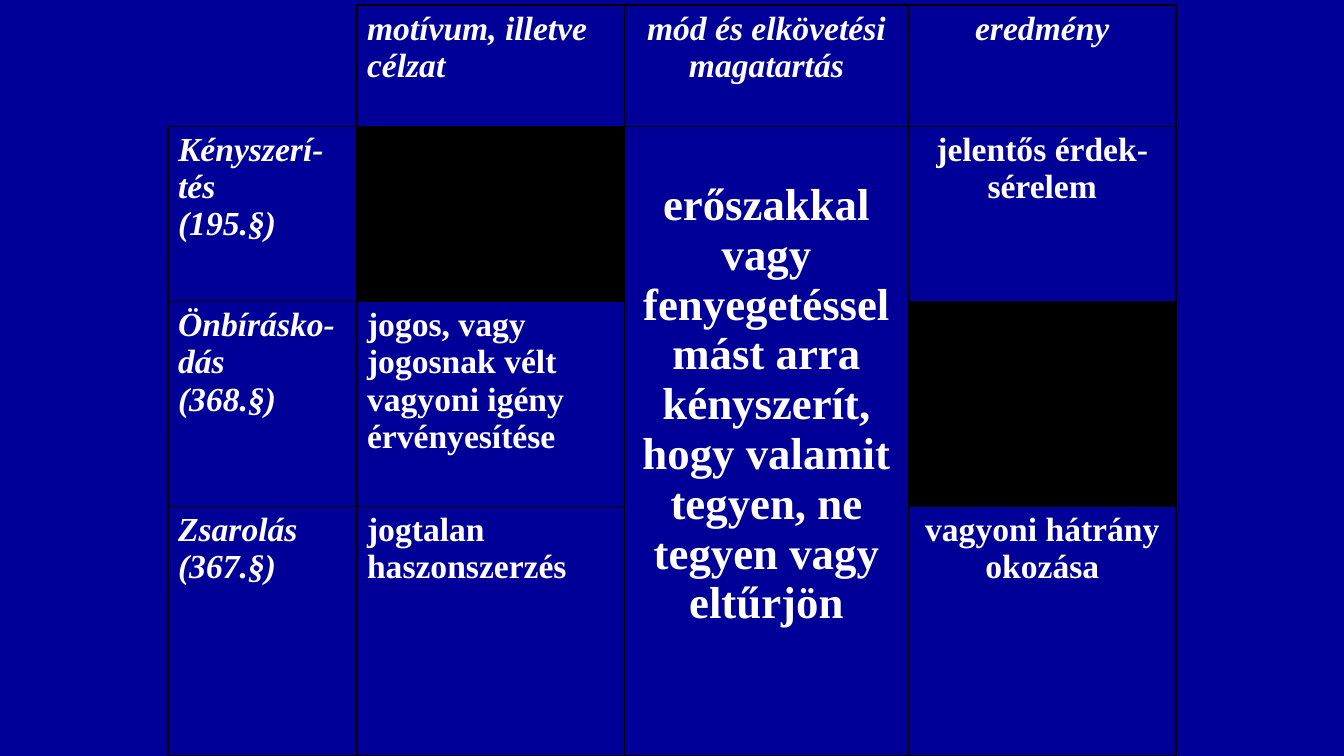
from lxml.etree import SubElement
from pptx import Presentation
from pptx.dml.color import RGBColor
from pptx.enum.text import PP_ALIGN
from pptx.oxml.ns import qn
from pptx.util import Pt

NAVY = RGBColor(0x00, 0x00, 0x99)
BLACK = RGBColor(0x00, 0x00, 0x00)
WHITE = RGBColor(0xFF, 0xFF, 0xFF)
FONT = "Times New Roman"

CONDUCT = ("erőszakkal vagy fenyegetéssel mást arra kényszerít,\n"
           "hogy valamit tegyen, ne tegyen vagy eltűrjön")
ROWS = [
    ["", "motívum, illetve célzat", "mód és elkövetési magatartás", "eredmény"],
    ["Kényszerí-tés\n(195.§)", "", CONDUCT, "jelentős érdek-sérelem"],
    ["Önbírásko-dás\n(368.§)", "jogos, vagy jogosnak vélt vagyoni igény érvényesítése", "", ""],
    ["Zsarolás\n(367.§)", "jogtalan haszonszerzés", "", "vagyoni hátrány okozása"],
]
BLACKED_OUT = {(1, 1), (2, 3)}
CONDUCT_COLUMN = 2
COLUMN_WIDTHS = [135, 191, 203, 191]
ROW_HEIGHTS = [86.5, 125.5, 146, 178.5]
LEFT, TOP = 120, 3.6


def set_borders(cell, visible_sides):
    properties = cell._tc.get_or_add_tcPr()
    for side in "LRTB":
        line = SubElement(properties, qn(f"a:ln{side}"), w=str(Pt(1)))
        if side in visible_sides:
            fill = SubElement(line, qn("a:solidFill"))
            SubElement(fill, qn("a:srgbClr"), val=str(BLACK))
        else:
            SubElement(line, qn("a:noFill"))


def write_text(cell, text, size, italic, centred):
    cell.text_frame.text = text
    for para in cell.text_frame.paragraphs:
        para.alignment = PP_ALIGN.CENTER if centred else PP_ALIGN.LEFT
        for span in para.runs:
            span.font.name = FONT
            span.font.size = Pt(size)
            span.font.bold = True
            span.font.italic = italic
            span.font.color.rgb = WHITE


deck = Presentation()
deck.slide_width, deck.slide_height = Pt(960), Pt(540)
page = deck.slides.add_slide(deck.slide_layouts[6])
page.background.fill.solid()
page.background.fill.fore_color.rgb = NAVY

table = page.shapes.add_table(
    len(ROWS), len(COLUMN_WIDTHS), Pt(LEFT), Pt(TOP),
    Pt(sum(COLUMN_WIDTHS)), Pt(sum(ROW_HEIGHTS))).table
table.first_row = table.horz_banding = False
for column, width in zip(table.columns, COLUMN_WIDTHS):
    column.width = Pt(width)
for row, height in zip(table.rows, ROW_HEIGHTS):
    row.height = Pt(height)

for r, texts in enumerate(ROWS):
    for c, text in enumerate(texts):
        cell = table.cell(r, c)
        set_borders(cell, "RB" if r == c == 0 else "LRTB")
        if (r, c) in BLACKED_OUT:
            cell.fill.solid()
            cell.fill.fore_color.rgb = BLACK
        else:
            cell.fill.background()
        if text:
            write_text(cell, text, size=32 if text == CONDUCT else 24,
                       italic=r == 0 or c == 0, centred=c >= CONDUCT_COLUMN)

conduct_cell = table.cell(1, CONDUCT_COLUMN)
conduct_cell.merge(table.cell(len(ROWS) - 1, CONDUCT_COLUMN))
conduct_cell.margin_top = Pt(39)

deck.save("out.pptx")
